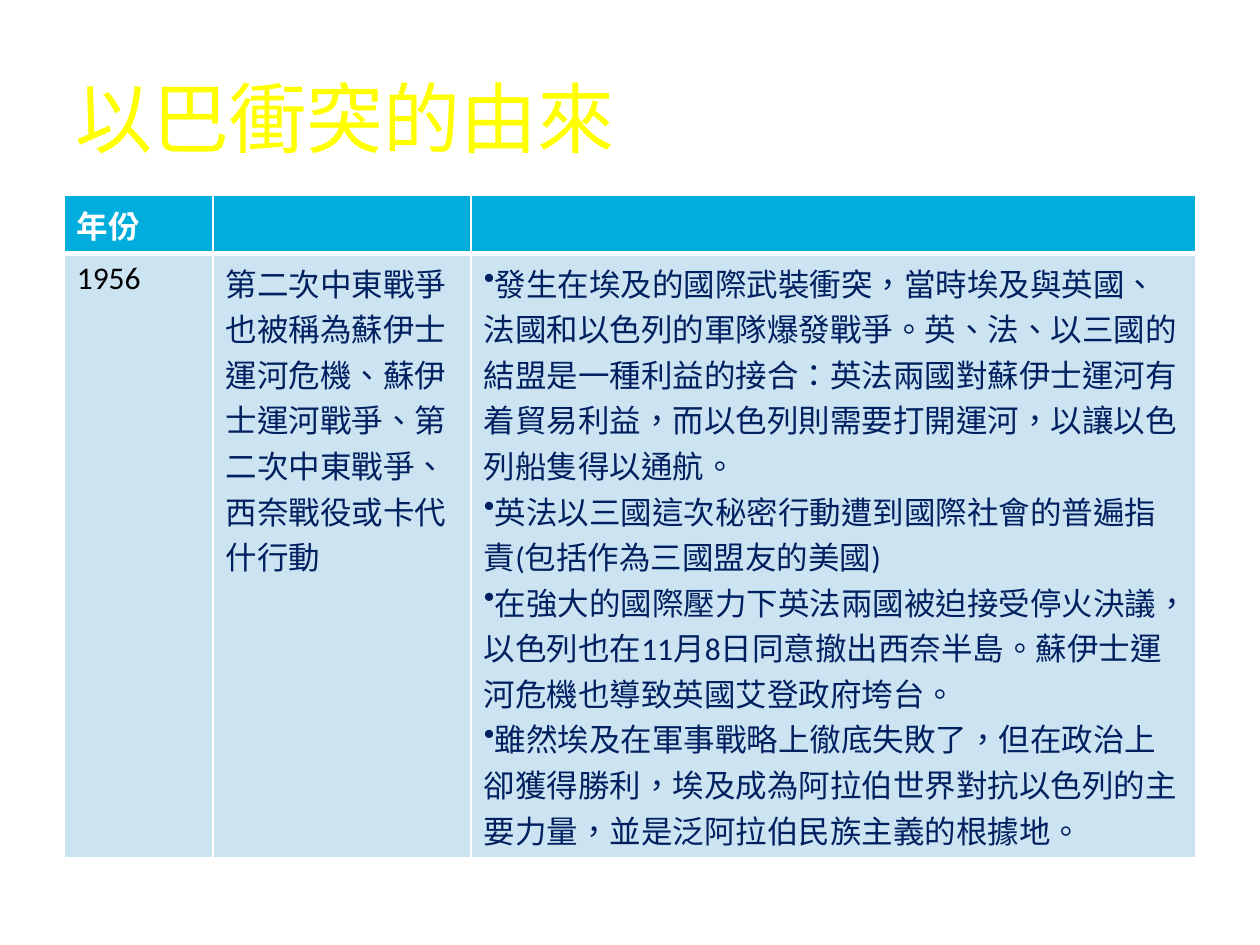
from dataclasses import dataclass

from lxml import etree
from pptx import Presentation
from pptx.dml.color import RGBColor
from pptx.enum import lang, text
from pptx.oxml import ns
from pptx.util import Pt

PX = 9144  # EMU per px, 100 px to the inch

WHITE = RGBColor(0xFF, 0xFF, 0xFF)
BLACK = RGBColor(0x00, 0x00, 0x00)
YELLOW = RGBColor(0xFF, 0xFF, 0x00)
NAVY = RGBColor(0x00, 0x20, 0x60)
HEADER_BLUE = RGBColor(0x00, 0xAD, 0xDC)
PALE_BLUE = RGBColor(0xCC, 0xE3, 0xF2)

LATIN_FONT = "Calibri"
CHINESE_FONT = "Noto Sans CJK SC"

COLUMN_WIDTHS = (118, 205, 575)
THIN, THICK = 1, 3


@dataclass(frozen=True)
class Entry:
    """The content of one table cell."""
    lines: tuple[str, ...] = ()
    color: RGBColor = NAVY
    bold: bool = False
    bullet: str = ""


@dataclass(frozen=True)
class Band:
    """One table row; border widths are in points."""
    entries: tuple[Entry, ...]
    height: int
    background: RGBColor
    top_border: int
    bottom_border: int


HEADINGS = (Entry(("年份",), WHITE, bold=True), Entry(), Entry())
SUEZ_WAR = (
    Entry(("1956",), BLACK),
    Entry((
        "第二次中東戰爭",
        "也被稱為蘇伊士運河危機、蘇伊士運河戰爭、第二次中東戰爭、西奈戰役或卡代什行動",
    )),
    Entry((
        "發生在埃及的國際武裝衝突，當時埃及與英國、法國和以色列的軍隊爆發戰爭。"
        "英、法、以三國的結盟是一種利益的接合：英法兩國對蘇伊士運河有着貿易利益，"
        "而以色列則需要打開運河，以讓以色列船隻得以通航。",
        "英法以三國這次秘密行動遭到國際社會的普遍指責(包括作為三國盟友的美國)",
        "在強大的國際壓力下英法兩國被迫接受停火決議，以色列也在11月8日同意撤出西奈半島。"
        "蘇伊士運河危機也導致英國艾登政府垮台。",
        "雖然埃及在軍事戰略上徹底失敗了，但在政治上卻獲得勝利，"
        "埃及成為阿拉伯世界對抗以色列的主要力量，並是泛阿拉伯民族主義的根據地。",
    ), bullet="•"),
)
BANDS = (
    Band(HEADINGS, 46, HEADER_BLUE, THIN, THICK),
    Band(SUEZ_WAR, 480, PALE_BLUE, THICK, THIN),
)


def style_paragraph(paragraph, size: int, latin: str, color: RGBColor, bold: bool = False) -> None:
    font = paragraph.font
    font.size, font.name, font.bold = Pt(size), latin, bold
    font.color.rgb = color
    font.language_id = lang.MSO_LANGUAGE_ID.TRADITIONAL_CHINESE
    properties = paragraph._p.pPr.find(ns.qn("a:defRPr"))
    etree.SubElement(properties, ns.qn("a:ea"), typeface=CHINESE_FONT)


def set_borders(cell, top: int, bottom: int) -> None:
    """Draw white cell edges, with widths in points."""
    properties = cell._tc.get_or_add_tcPr()
    edges = (("L", THIN), ("R", THIN), ("T", top), ("B", bottom))
    for index, (side, width) in enumerate(edges):
        line = etree.Element(ns.qn(f"a:ln{side}"), w=str(Pt(width)))
        fill = etree.SubElement(line, ns.qn("a:solidFill"))
        etree.SubElement(fill, ns.qn("a:srgbClr"), val=str(WHITE))
        properties.insert(index, line)


def fill_cell(cell, entry: Entry, background: RGBColor) -> None:
    cell.fill.solid()
    cell.fill.fore_color.rgb = background
    frame = cell.text_frame
    frame.text = "\n".join(entry.lines)
    for paragraph in frame.paragraphs:
        if entry.bullet:
            etree.SubElement(paragraph._p.get_or_add_pPr(), ns.qn("a:buChar"), char=entry.bullet)
        style_paragraph(paragraph, 18, LATIN_FONT, entry.color, entry.bold)


def add_title(slide, wording: str) -> None:
    frame = slide.shapes.add_textbox(50 * PX, 30 * PX, 900 * PX, 125 * PX).text_frame
    frame.word_wrap = True
    frame.vertical_anchor = text.MSO_ANCHOR.MIDDLE
    frame.text = wording
    style_paragraph(frame.paragraphs[0], 44, CHINESE_FONT, YELLOW)


def add_history_table(slide) -> None:
    total_height = sum(band.height for band in BANDS)
    table = slide.shapes.add_table(
        len(BANDS), len(COLUMN_WIDTHS),
        51 * PX, 155 * PX, sum(COLUMN_WIDTHS) * PX, total_height * PX,
    ).table
    for column, width in zip(table.columns, COLUMN_WIDTHS):
        column.width = width * PX
    for row, band in zip(table.rows, BANDS):
        row.height = band.height * PX
        for cell, entry in zip(row.cells, band.entries):
            fill_cell(cell, entry, band.background)
            set_borders(cell, band.top_border, band.bottom_border)


def main() -> None:
    presentation = Presentation()
    presentation.slide_width, presentation.slide_height = 1000 * PX, 750 * PX
    slide = presentation.slides.add_slide(presentation.slide_layouts[6])
    add_title(slide, "以巴衝突的由來")
    add_history_table(slide)
    presentation.save("out.pptx")


if __name__ == "__main__":
    main()
